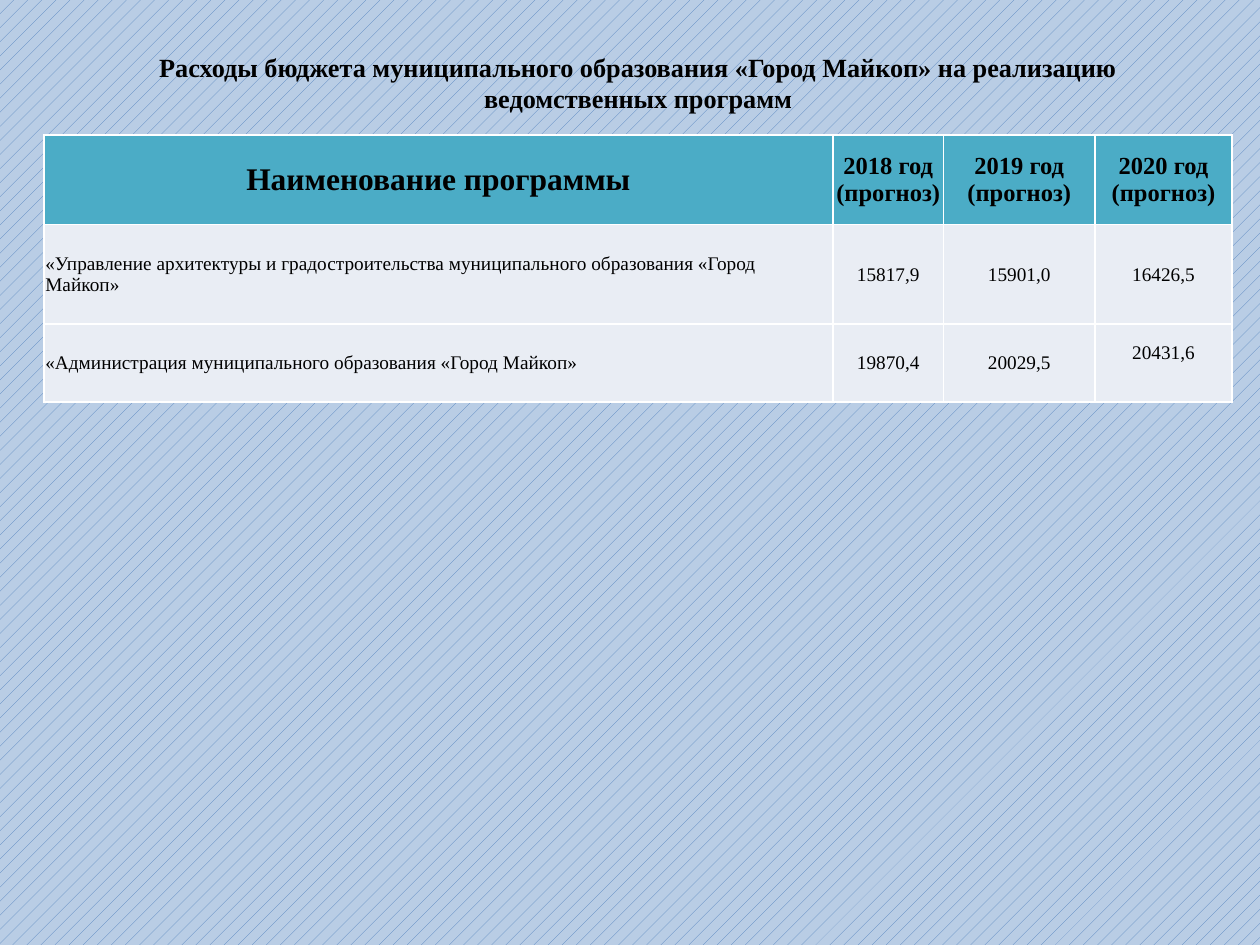
"""Build the slide on spending for departmental programmes of the city of Maykop."""
from lxml import etree
from pptx import Presentation
from pptx import util as u
from pptx.dml.color import RGBColor
from pptx.enum import dml, text
from pptx.oxml.ns import qn

TITLE = "Расходы бюджета муниципального образования «Город Майкоп» на реализацию\vведомственных программ"
HEADINGS = ["Наименование программы"] + [f"{year} год\v(прогноз)" for year in (2018, 2019, 2020)]
PROGRAMMES = [
    ["«Управление архитектуры и градостроительства муниципального образования «Город Майкоп»",
     "15817,9", "15901,0", "16426,5"],
    ["«Администрация муниципального образования «Город Майкоп»",
     "19870,4", "20029,5", "20431,6"],
]
COLUMN_WIDTHS = [6.26, 0.88, 1.2, 1.09]
ROW_HEIGHTS = [0.71, 0.79, 0.62]

BLACK = RGBColor(0x00, 0x00, 0x00)
WHITE = RGBColor(0xFF, 0xFF, 0xFF)
TEAL = RGBColor(0x4B, 0xAC, 0xC6)
PALE = RGBColor(0xE9, 0xED, 0xF4)
SKY = RGBColor(0xB9, 0xCD, 0xE5)
BLUE = RGBColor(0x4F, 0x81, 0xBD)


def write(frame, wording, size, bold=False, align=text.PP_ALIGN.CENTER):
    frame.text = wording
    paragraph = frame.paragraphs[0]
    paragraph.alignment = align
    for run in paragraph.runs:
        run.font.name = "Times New Roman"
        run.font.size = u.Pt(size)
        run.font.bold = bold
        run.font.color.rgb = BLACK


def add_borders(cell, color, width):
    properties = cell._tc.get_or_add_tcPr()
    for position, side in enumerate(("lnL", "lnR", "lnT", "lnB")):
        border = etree.Element(qn(f"a:{side}"), w=str(u.Pt(width)))
        fill = etree.SubElement(border, qn("a:solidFill"))
        etree.SubElement(fill, qn("a:srgbClr"), val=str(color))
        properties.insert(position, border)


def add_title(slide):
    title = slide.shapes.title
    title.left, title.top = u.Inches(0.34), u.Inches(0.35)
    title.width, title.height = u.Inches(9.45), u.Inches(0.61)
    frame = title.text_frame
    frame.word_wrap = True
    frame.auto_size = text.MSO_AUTO_SIZE.NONE
    frame.vertical_anchor = text.MSO_ANCHOR.MIDDLE
    write(frame, TITLE, 15, bold=True)


def add_programmes(slide):
    rows = [HEADINGS] + PROGRAMMES
    table = slide.shapes.add_table(
        len(rows), len(HEADINGS), u.Inches(0.35), u.Inches(1.07),
        u.Inches(sum(COLUMN_WIDTHS)), u.Inches(sum(ROW_HEIGHTS))).table
    for column, width in zip(table.columns, COLUMN_WIDTHS):
        column.width = u.Inches(width)
    for row, height in zip(table.rows, ROW_HEIGHTS):
        row.height = u.Inches(height)
    for r, values in enumerate(rows):
        for c, wording in enumerate(values):
            cell = table.cell(r, c)
            header, name = r == 0, c == 0
            size = (18 if name else 14) if header else 11
            align = text.PP_ALIGN.LEFT if name and not header else text.PP_ALIGN.CENTER
            write(cell.text_frame, wording, size, bold=header, align=align)
            cell.vertical_anchor = text.MSO_ANCHOR.MIDDLE
            cell.margin_left = cell.margin_right = cell.margin_top = u.Inches(0.01)
            cell.margin_bottom = 0
            cell.fill.solid()
            cell.fill.fore_color.rgb = TEAL if header else PALE
            add_borders(cell, WHITE, 1)
    table.cell(len(rows) - 1, len(HEADINGS) - 1).margin_bottom = u.Inches(0.17)


def main():
    deck = Presentation()
    deck.slide_width, deck.slide_height = u.Inches(10), u.Inches(7.5)
    slide = deck.slides.add_slide(deck.slide_layouts[5])
    backdrop = slide.background.fill
    backdrop.patterned()
    backdrop.pattern = dml.MSO_PATTERN.PERCENT_10
    backdrop.fore_color.rgb = BLUE
    backdrop.back_color.rgb = SKY
    add_title(slide)
    add_programmes(slide)
    deck.save("out.pptx")


if __name__ == "__main__":
    main()
